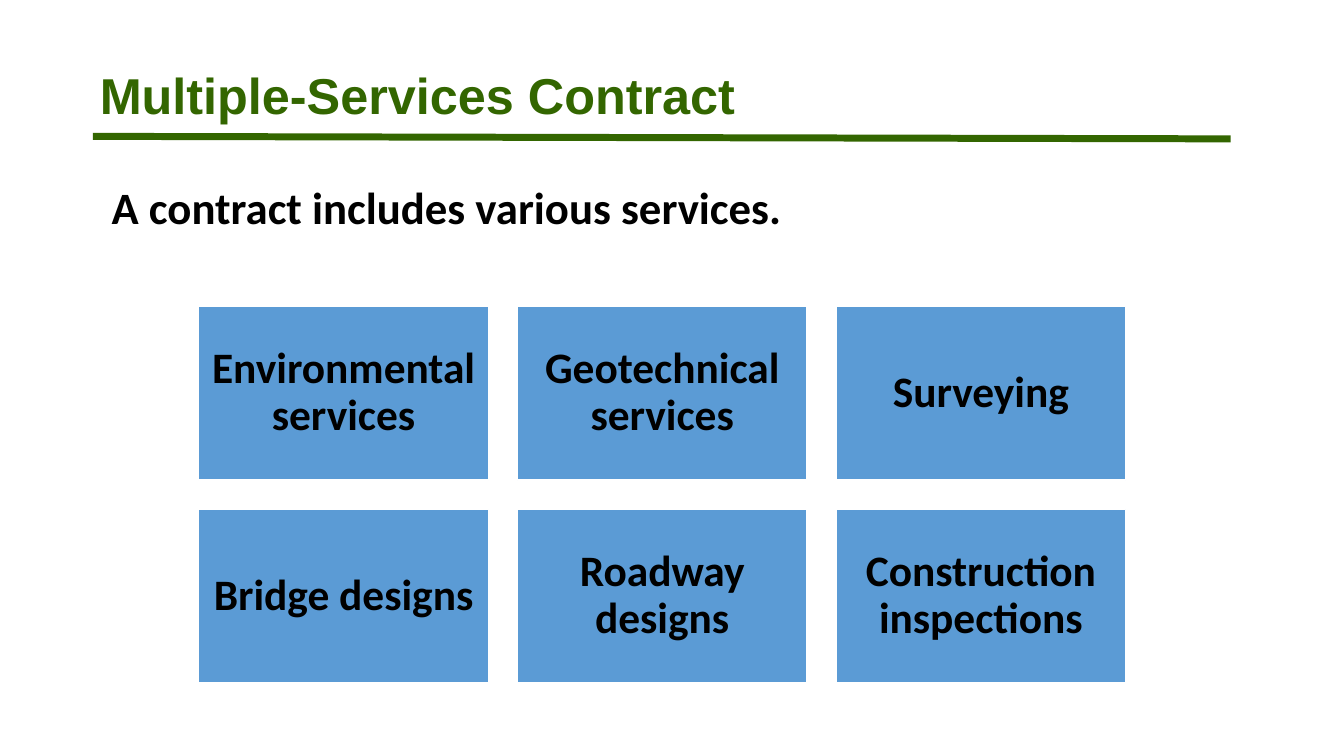
"""Build the Multiple-Services Contract slide."""
from dataclasses import dataclass

from lxml.etree import SubElement
from pptx import Presentation
from pptx.dml.color import RGBColor
from pptx.enum.shapes import MSO_CONNECTOR, MSO_SHAPE
from pptx.enum.text import MSO_ANCHOR, PP_ALIGN
from pptx.oxml.ns import qn
from pptx.util import Pt


@dataclass(frozen=True)
class Theme:
    green: RGBColor = RGBColor(0x33, 0x66, 0x00)
    blue: RGBColor = RGBColor(0x5B, 0x9B, 0xD5)
    black: RGBColor = RGBColor(0x00, 0x00, 0x00)
    white: RGBColor = RGBColor(0xFF, 0xFF, 0xFF)
    title_font: str = "Arial"
    body_font: str = "Calibri"
    title_size: int = 36
    subtitle_size: int = 32
    service_size: int = 31


theme = Theme()


def write_text(shape, text, font_name, size, color, anchor, alignment):
    text_frame = shape.text_frame
    text_frame.word_wrap = True
    text_frame.vertical_anchor = anchor
    text_frame.text = text
    paragraph = text_frame.paragraphs[0]
    paragraph.alignment = alignment
    paragraph.line_spacing = 0.9
    font = paragraph.runs[0].font
    font.name = font_name
    font.size = Pt(size)
    font.bold = True
    font.color.rgb = color


presentation = Presentation()
presentation.slide_width = Pt(960)
presentation.slide_height = Pt(540)
slide = presentation.slides.add_slide(presentation.slide_layouts[6])

title_rule = slide.shapes.add_connector(
    MSO_CONNECTOR.STRAIGHT, Pt(66.3), Pt(97.4), Pt(879), Pt(99.2)
)
title_rule.line.color.rgb = theme.green
title_rule.line.width = Pt(5)
SubElement(title_rule._element.spPr, qn("a:effectLst"))

title = slide.shapes.add_textbox(Pt(64.2), Pt(41), Pt(741), Pt(51.8))
write_text(title, "Multiple-Services Contract", theme.title_font,
           theme.title_size, theme.green, MSO_ANCHOR.BOTTOM, PP_ALIGN.LEFT)

subtitle = slide.shapes.add_textbox(Pt(72.7), Pt(128.9), Pt(809), Pt(90.7))
write_text(subtitle, "A contract includes various services.", theme.body_font,
           theme.subtitle_size, theme.black, MSO_ANCHOR.TOP, PP_ALIGN.LEFT)

service_rows = [
    ["Environmental services", "Geotechnical services", "Surveying"],
    ["Bridge designs", "Roadway designs", "Construction inspections"],
]
grid_left, grid_top = 142, 219
box_width, box_height = 206.8, 124
gap = 20.8

for row, services in enumerate(service_rows):
    for column, service in enumerate(services):
        box = slide.shapes.add_shape(
            MSO_SHAPE.RECTANGLE,
            Pt(grid_left + column * (box_width + gap)),
            Pt(grid_top + row * (box_height + gap)),
            Pt(box_width),
            Pt(box_height),
        )
        box.shadow.inherit = False
        box.fill.solid()
        box.fill.fore_color.rgb = theme.blue
        box.line.color.rgb = theme.white
        box.line.width = Pt(1)
        box.text_frame.margin_left = box.text_frame.margin_right = Pt(6)
        write_text(box, service, theme.body_font, theme.service_size,
                   theme.black, MSO_ANCHOR.MIDDLE, PP_ALIGN.CENTER)

presentation.save("out.pptx")
